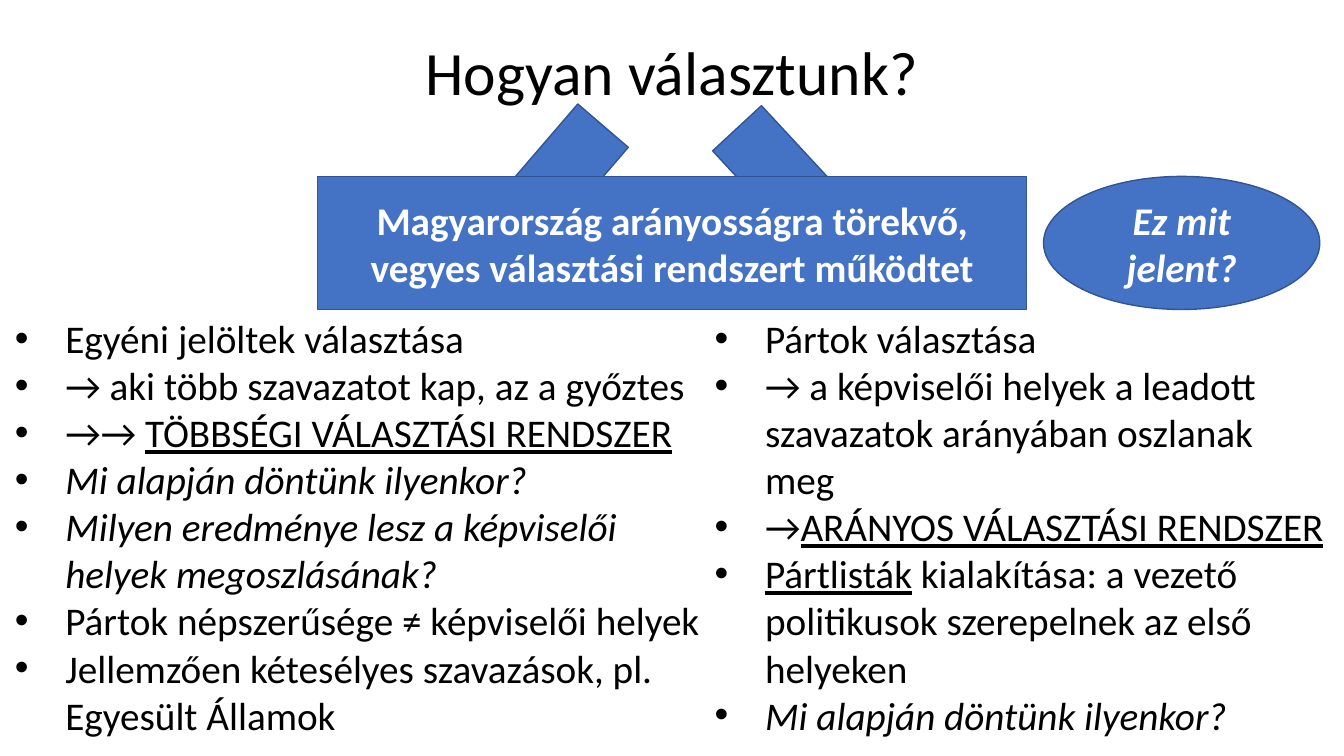
import pptx
import pptx.util
import pptx.dml.color
import pptx.enum.shapes
import pptx.enum.text
import pptx.oxml
import lxml.etree

PX = 9144
BLUE = pptx.dml.color.RGBColor(0x44, 0x72, 0xC4)
EDGE = pptx.dml.color.RGBColor(0x32, 0x54, 0x91)
BLACK = pptx.dml.color.RGBColor(0, 0, 0)
WHITE = pptx.dml.color.RGBColor(255, 255, 255)
FORM = pptx.enum.shapes.MSO_SHAPE
ALIGN = pptx.enum.text.PP_ALIGN
ANCHOR = pptx.enum.text.MSO_ANCHOR
LINED = {"underline": True}
SLANT = {"italic": True}

SINGLE = [
    [("Egyéni jelöltek választása", {})],
    [("→ aki több szavazatot kap, az a győztes", {})],
    [("→→ ", {}), ("TÖBBSÉGI VÁLASZTÁSI RENDSZER", LINED)],
    [("Mi alapján döntünk ilyenkor?", SLANT)],
    [("Milyen eredménye lesz a képviselői helyek megoszlásának?", SLANT)],
    [("Pártok népszerűsége ≠ képviselői helyek", {})],
    [("Jellemzően kétesélyes szavazások, pl. Egyesült Államok", {})],
]
PARTY = [
    [("Pártok választása", {})],
    [("→ a képviselői helyek a leadott szavazatok arányában oszlanak meg", {})],
    [("→", {}), ("ARÁNYOS VÁLASZTÁSI RENDSZER", LINED)],
    [("Pártlisták", LINED),
     (" kialakítása: a vezető politikusok szerepelnek az első helyeken", {})],
    [("Mi alapján döntünk ilyenkor?", SLANT)],
]


def scale(box):
    """Turn a box in px into EMU."""
    return [n * PX for n in box]


def write(para, text, size, color, style):
    """Add one run of text to a paragraph."""
    run = para.add_run()
    run.text = text
    look = {"name": "Calibri", "size": pptx.util.Pt(size), **style}
    for key, value in look.items():
        setattr(run.font, key, value)
    run.font.color.rgb = color


def center(frame, text, size, color, style):
    """Fill a frame with one centred paragraph."""
    frame.word_wrap = True
    frame.vertical_anchor = ANCHOR.MIDDLE
    para = frame.paragraphs[0]
    para.alignment = ALIGN.CENTER
    write(para, text, size, color, style)
    return para


def add_title(slide, box, text):
    """Add the heading."""
    frame = slide.shapes.add_textbox(*scale(box)).text_frame
    center(frame, text, 44, BLACK, {}).line_spacing = 0.9


def add_block(slide, form, box, turn=0):
    """Add a blue shape with a dark edge."""
    shape = slide.shapes.add_shape(form, *scale(box))
    shape.rotation = turn
    shape.shadow.inherit = False
    shape.fill.solid()
    shape.fill.fore_color.rgb = BLUE
    shape.line.color.rgb = EDGE
    shape.line.width = pptx.util.Pt(1)
    return shape


def add_list(slide, box, items):
    """Add a bulleted list of paragraphs made of styled runs."""
    frame = slide.shapes.add_textbox(*scale(box)).text_frame
    frame.word_wrap = True
    for i, runs in enumerate(items):
        para = frame.add_paragraph() if i else frame.paragraphs[0]
        props = para._p.get_or_add_pPr()
        props.set("marL", str(50 * PX))
        props.set("indent", str(-50 * PX))
        for tag, key, value in (("buFont", "typeface", "Arial"), ("buChar", "char", "•")):
            node = lxml.etree.SubElement(props, pptx.oxml.ns.qn("a:" + tag))
            node.set(key, value)
        for text, style in runs:
            write(para, text, 28, BLACK, style)


def main():
    """Build the slide and save it."""
    deck = pptx.Presentation()
    deck.slide_width, deck.slide_height = scale((1333, 750))
    slide = deck.slides.add_slide(deck.slide_layouts[6])
    add_title(slide, (410, 9, 513, 132), "Hogyan választunk?")
    for left, turn in ((463, 40.7), (737, 317.2)):
        add_block(slide, FORM.DOWN_ARROW, (left, 99, 132, 212), turn)
    add_list(slide, (5, 307, 703, 434), SINGLE)
    add_list(slide, (699, 307, 629, 434), PARTY)
    claim = add_block(slide, FORM.RECTANGLE, (315, 175, 703, 132))
    center(claim.text_frame,
           "Magyarország arányosságra törekvő, vegyes választási rendszert működtet",
           28, WHITE, {"bold": True})
    query = add_block(slide, FORM.OVAL, (1035, 175, 274, 132))
    center(query.text_frame, "Ez mit jelent?", 28, WHITE, {"bold": True, **SLANT})
    deck.save("out.pptx")


if __name__ == "__main__":
    main()
